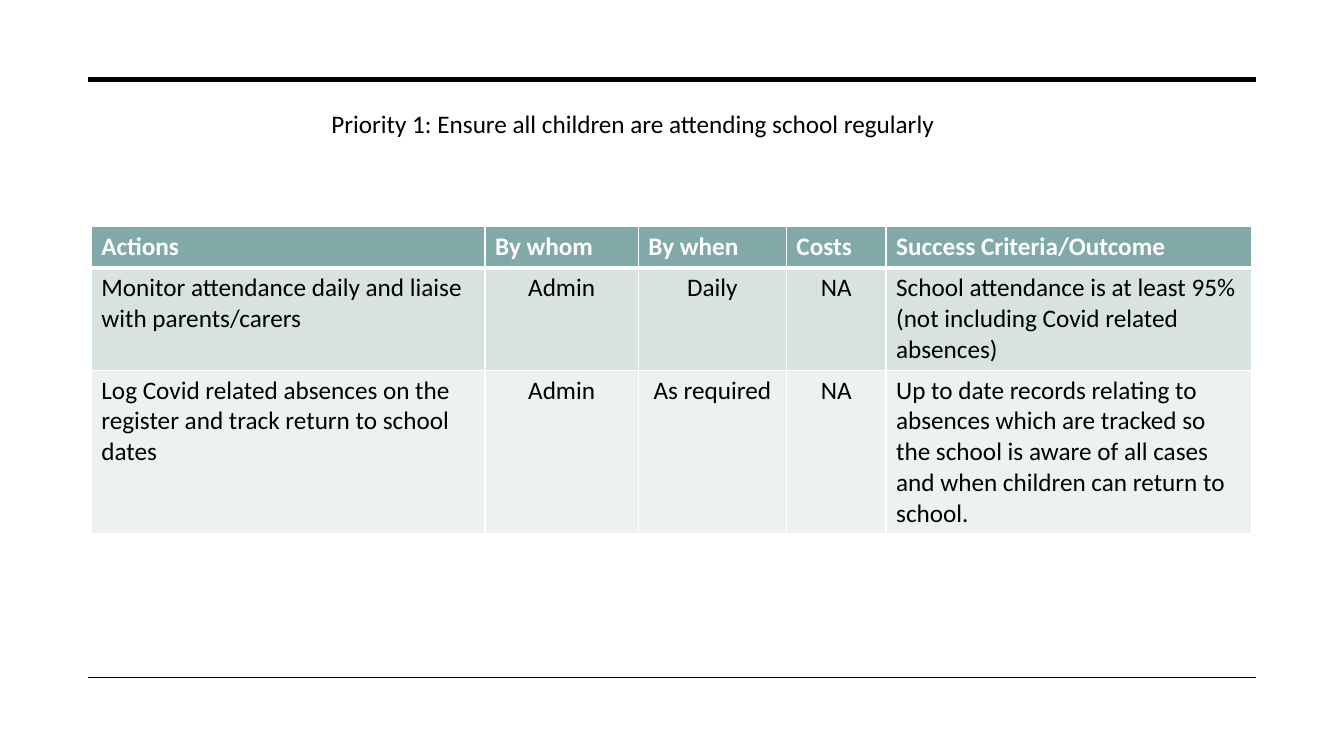
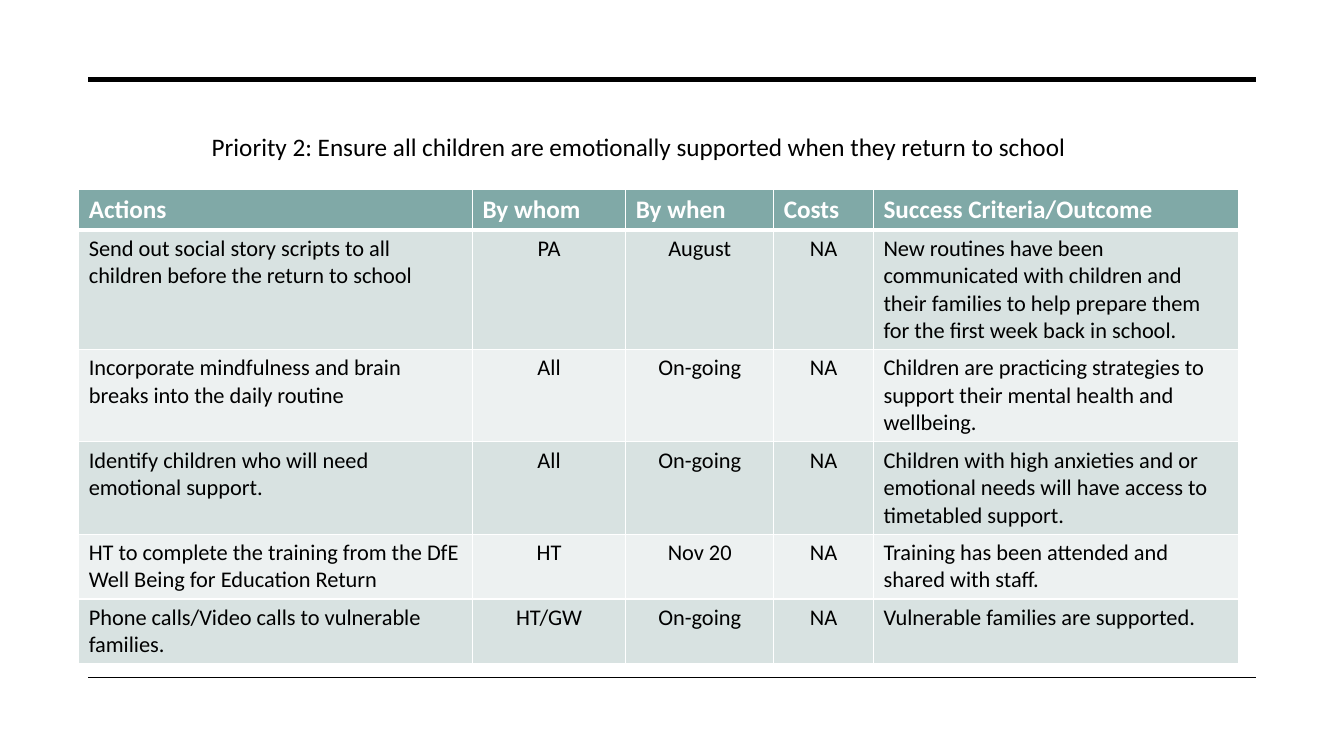
from lxml import etree
from pptx import Presentation
from pptx import util as u
from pptx.dml import color
from pptx.enum import text
from pptx.enum import shapes
from pptx.oxml import ns

PX = 9525
FONT = "Calibri"
BLACK = "000000"
WHITE = "FFFFFF"
HEADER_FILL = "80A9A7"
BAND_FILLS = ("D8E2E1", "EDF1F1")
HEADINGS = ("Actions", "By whom", "By when", "Costs", "Success Criteria/Outcome")
COLUMN_WIDTHS = (375, 146, 141, 95, 348)
CENTRED_COLUMNS = (1, 2, 3)
ROW_HEIGHT = 39
TITLE_HEIGHT = 38
TITLE_SIZE = HEADER_SIZE = 18

ATTENDANCE = (
    ("Monitor attendance daily and liaise with parents/carers", "Admin", "Daily", "NA",
     "School attendance is at least 95% (not including Covid related absences)"),
    ("Log Covid related absences on the register and track return to school dates",
     "Admin", "As required", "NA",
     "Up to date records relating to absences which are tracked so the school is aware "
     "of all cases and when children can return to school."),
)
EMOTIONAL_SUPPORT = (
    ("Send out social story scripts to all children before the return to school",
     "PA", "August", "NA",
     "New routines have been communicated with children and their families to help "
     "prepare them for the first week back in school."),
    ("Incorporate mindfulness and brain breaks into the daily routine",
     "All", "On-going", "NA",
     "Children are practicing strategies to support their mental health and wellbeing."),
    ("Identify children who will need emotional support.", "All", "On-going", "NA",
     "Children with high anxieties and or emotional needs will have access to "
     "timetabled support."),
    ("HT to complete the training from the DfE Well Being for Education Return",
     "HT", "Nov 20", "NA", "Training has been attended and shared with staff."),
    ("Phone calls/Video calls to vulnerable families.", "HT/GW", "On-going", "NA",
     "Vulnerable families are supported."),
)


def px(length):
    return u.Emu(length * PX)


def rgb(value):
    return color.RGBColor.from_string(value)


class Deck:
    def __init__(self):
        self.presentation = Presentation()
        self.presentation.slide_width = px(1280)
        self.presentation.slide_height = px(720)
        self.slide = None

    def add_slide(self):
        layout = self.presentation.slide_layouts[5]
        self.slide = self.presentation.slides.add_slide(layout)
        self.rule(76, 3.5)
        self.rule(645, 1)

    def rule(self, top, weight):
        connector = self.slide.shapes.add_connector(
            shapes.MSO_CONNECTOR.STRAIGHT, px(84), px(top), px(1196), px(top))
        connector.line.color.rgb = rgb(BLACK)
        connector.line.width = u.Pt(weight)
        etree.SubElement(connector._element.spPr, ns.qn("a:effectLst"))

    def style(self, paragraph, size, colour, bold=False, centred=False):
        paragraph.font.name = FONT
        paragraph.font.size = u.Pt(size)
        paragraph.font.color.rgb = rgb(colour)
        paragraph.font.bold = bold
        paragraph.alignment = text.PP_ALIGN.CENTER if centred else text.PP_ALIGN.LEFT

    def title(self, wording, left, top, width):
        title = self.slide.shapes.title
        title.left, title.top = px(left), px(top)
        title.width, title.height = px(width), px(TITLE_HEIGHT)
        frame = title.text_frame
        frame.text = wording
        frame.word_wrap = True
        frame.auto_size = text.MSO_AUTO_SIZE.NONE
        frame.vertical_anchor = text.MSO_ANCHOR.TOP
        self.style(frame.paragraphs[0], TITLE_SIZE, BLACK)

    def borders(self, cell, top, bottom):
        properties = cell._tc.get_or_add_tcPr()
        for side, weight in (("L", 1), ("R", 1), ("T", top), ("B", bottom)):
            line = etree.SubElement(properties, ns.qn(f"a:ln{side}"), w=str(u.Pt(weight)))
            fill = etree.SubElement(line, ns.qn("a:solidFill"))
            etree.SubElement(fill, ns.qn("a:srgbClr"), val=WHITE)

    def table(self, actions, left, top, body_size):
        rows = (HEADINGS, *actions)
        table = self.slide.shapes.add_table(
            len(rows), len(HEADINGS), px(left), px(top),
            px(sum(COLUMN_WIDTHS)), px(ROW_HEIGHT * len(rows))).table
        for column, width in zip(table.columns, COLUMN_WIDTHS):
            column.width = px(width)
        for row_index, row in enumerate(rows):
            header = row_index == 0
            table.rows[row_index].height = px(ROW_HEIGHT)
            for column_index, wording in enumerate(row):
                cell = table.cell(row_index, column_index)
                cell.text = wording
                self.borders(cell, 3 if row_index == 1 else 1, 3 if header else 1)
                cell.fill.solid()
                cell.fill.fore_color.rgb = rgb(
                    HEADER_FILL if header else BAND_FILLS[(row_index - 1) % 2])
                paragraph = cell.text_frame.paragraphs[0]
                if header:
                    self.style(paragraph, HEADER_SIZE, WHITE, bold=True)
                else:
                    self.style(paragraph, body_size, BLACK,
                               centred=column_index in CENTRED_COLUMNS)


def main():
    deck = Deck()

    deck.add_slide()
    deck.title("Priority 1: Ensure all children are attending school regularly", 306, 98, 601)
    deck.table(ATTENDANCE, 87, 216, 18)

    deck.add_slide()
    deck.title("Priority 2: Ensure all children are emotionally supported when they return to school",
               192, 120, 870)
    deck.table(EMOTIONAL_SUPPORT, 75, 180, 16)

    deck.presentation.save("out.pptx")


if __name__ == "__main__":
    main()
